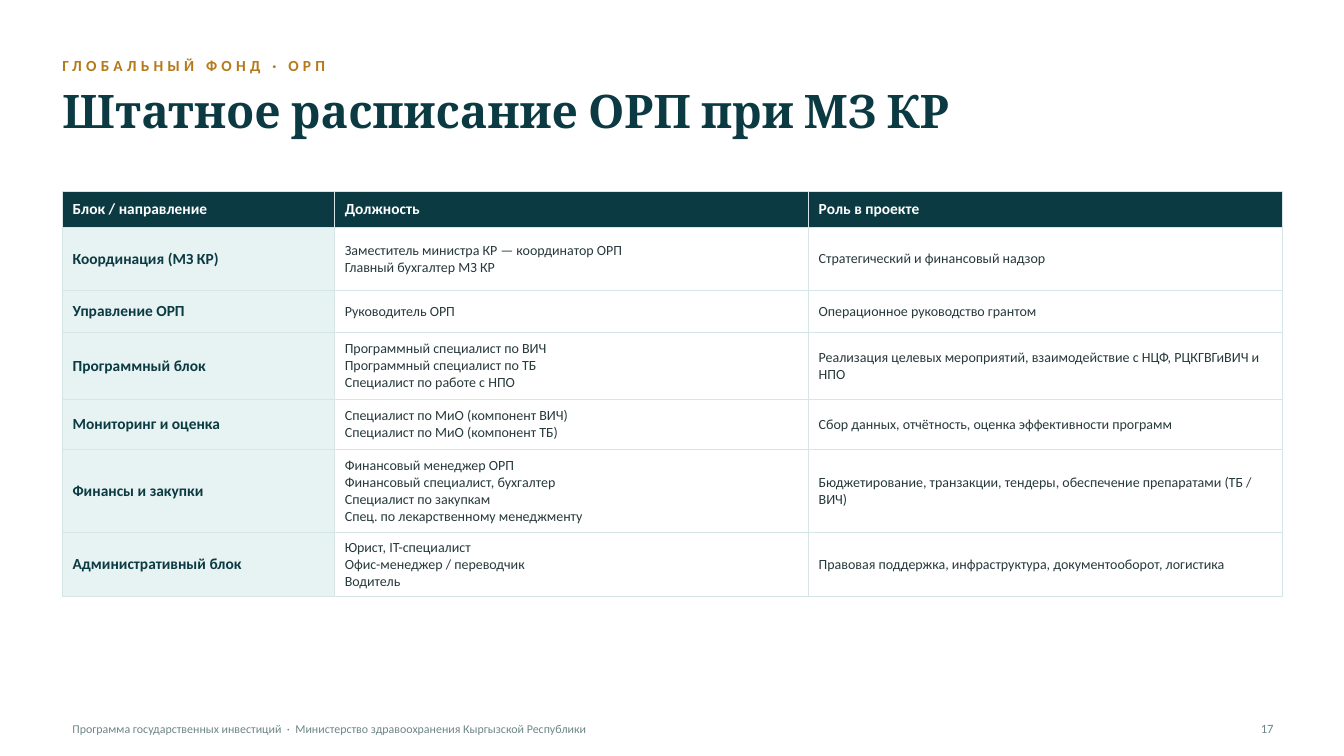
from pptx import Presentation
from pptx.dml.color import RGBColor
from pptx.enum.text import MSO_ANCHOR as Anchor, PP_ALIGN as Align
from pptx.oxml import parse_xml
from pptx.oxml.ns import nsdecls
from pptx.util import Pt

SCALE = 9144
TEAL = RGBColor(0x0B, 0x3A, 0x42)
GOLD = RGBColor(0xB5, 0x79, 0x19)
INK = RGBColor(0x27, 0x39, 0x3B)
GREY = RGBColor(0x6E, 0x84, 0x87)
MINT = RGBColor(0xE7, 0xF2, 0xF2)
EDGE = RGBColor(0xD6, 0xE5, 0xE5)
WHITE = RGBColor(0xFF, 0xFF, 0xFF)

LEFT = 62
WIDTHS = [270, 470, 470]
HEIGHTS = [36, 62, 42, 66, 50, 82, 60]
STAFF = [
    ("Блок / направление", "Должность", "Роль в проекте"),
    ("Координация (МЗ КР)",
     "Заместитель министра КР — координатор ОРП\nГлавный бухгалтер МЗ КР",
     "Стратегический и финансовый надзор"),
    ("Управление ОРП", "Руководитель ОРП", "Операционное руководство грантом"),
    ("Программный блок",
     "Программный специалист по ВИЧ\nПрограммный специалист по ТБ\n"
     "Специалист по работе с НПО",
     "Реализация целевых мероприятий, взаимодействие с НЦФ, РЦКГВГиВИЧ и НПО"),
    ("Мониторинг и оценка",
     "Специалист по МиО (компонент ВИЧ)\nСпециалист по МиО (компонент ТБ)",
     "Сбор данных, отчётность, оценка эффективности программ"),
    ("Финансы и закупки",
     "Финансовый менеджер ОРП\nФинансовый специалист, бухгалтер\n"
     "Специалист по закупкам\nСпец. по лекарственному менеджменту",
     "Бюджетирование, транзакции, тендеры, обеспечение препаратами (ТБ / ВИЧ)"),
    ("Административный блок",
     "Юрист, IT-специалист\nОфис-менеджер / переводчик\nВодитель",
     "Правовая поддержка, инфраструктура, документооборот, логистика"),
]


def px(*values):
    return [value * SCALE for value in values]


def write(frame, text, size, color, bold=False, face="Calibri", align=Align.LEFT):
    frame.text = text
    for line in frame.paragraphs:
        line.alignment = align
        font = line.font
        font.name, font.size, font.bold = face, Pt(size), bold
        font.color.rgb = color


def label(slide, area, text, size, color, inset=True, anchor=Anchor.MIDDLE, **style):
    frame = slide.shapes.add_textbox(*px(*area)).text_frame
    frame.word_wrap = True
    frame.vertical_anchor = anchor
    if not inset:
        frame.margin_left = frame.margin_right = 0
        frame.margin_top = frame.margin_bottom = 0
    write(frame, text, size, color, **style)
    return frame


def track(frame, points):
    for run in frame.paragraphs[0].runs:
        run._r.get_or_add_rPr().set("spc", str(points * 100))


def border(cell):
    props = cell._tc.get_or_add_tcPr()
    for side in "LRTB":
        props.append(parse_xml(
            f'<a:ln{side} {nsdecls("a")} w="{Pt(0.5)}"><a:solidFill>'
            f'<a:srgbClr val="{EDGE}"/></a:solidFill></a:ln{side}>'))


def fill(cell, text, size, color, back, bold):
    cell.margin_left, cell.margin_right = px(10, 10)
    cell.margin_top, cell.margin_bottom = px(7, 7)
    cell.vertical_anchor = Anchor.MIDDLE
    border(cell)
    cell.fill.solid()
    cell.fill.fore_color.rgb = back
    write(cell.text_frame, text, size, color, bold)


def grid(slide, top):
    area = px(LEFT, top, sum(WIDTHS), sum(HEIGHTS))
    table = slide.shapes.add_table(len(STAFF), len(WIDTHS), *area).table
    table.horz_banding = False
    for column, width in zip(table.columns, px(*WIDTHS)):
        column.width = width
    for row, height in zip(table.rows, px(*HEIGHTS)):
        row.height = height
    for i, texts in enumerate(STAFF):
        for j, text in enumerate(texts):
            if i == 0:
                style = 11, WHITE, TEAL, True
            elif j == 0:
                style = 11, TEAL, MINT, True
            else:
                style = 10, INK, WHITE, False
            fill(table.cell(i, j), text, *style)


def main():
    deck = Presentation()
    deck.slide_width, deck.slide_height = px(1333, 750)
    slide = deck.slides.add_slide(deck.slide_layouts[6])
    topic = label(slide, (LEFT, 50, 1150, 30), "ГЛОБАЛЬНЫЙ ФОНД · ОРП", 11, GOLD,
                  inset=False, bold=True)
    track(topic, 3)
    label(slide, (LEFT, 82, 1150, 85), "Штатное расписание ОРП при МЗ КР", 33, TEAL,
          inset=False, anchor=Anchor.TOP, bold=True, face="Cambria")
    grid(slide, 190)
    label(slide, (LEFT, 708, 1050, 30),
          "Программа государственных инвестиций  ·  "
          "Министерство здравоохранения Кыргызской Республики", 8.5, GREY)
    label(slide, (1223, 708, 50, 30), "17", 9, GREY, align=Align.RIGHT)
    deck.save("out.pptx")


if __name__ == "__main__":
    main()
